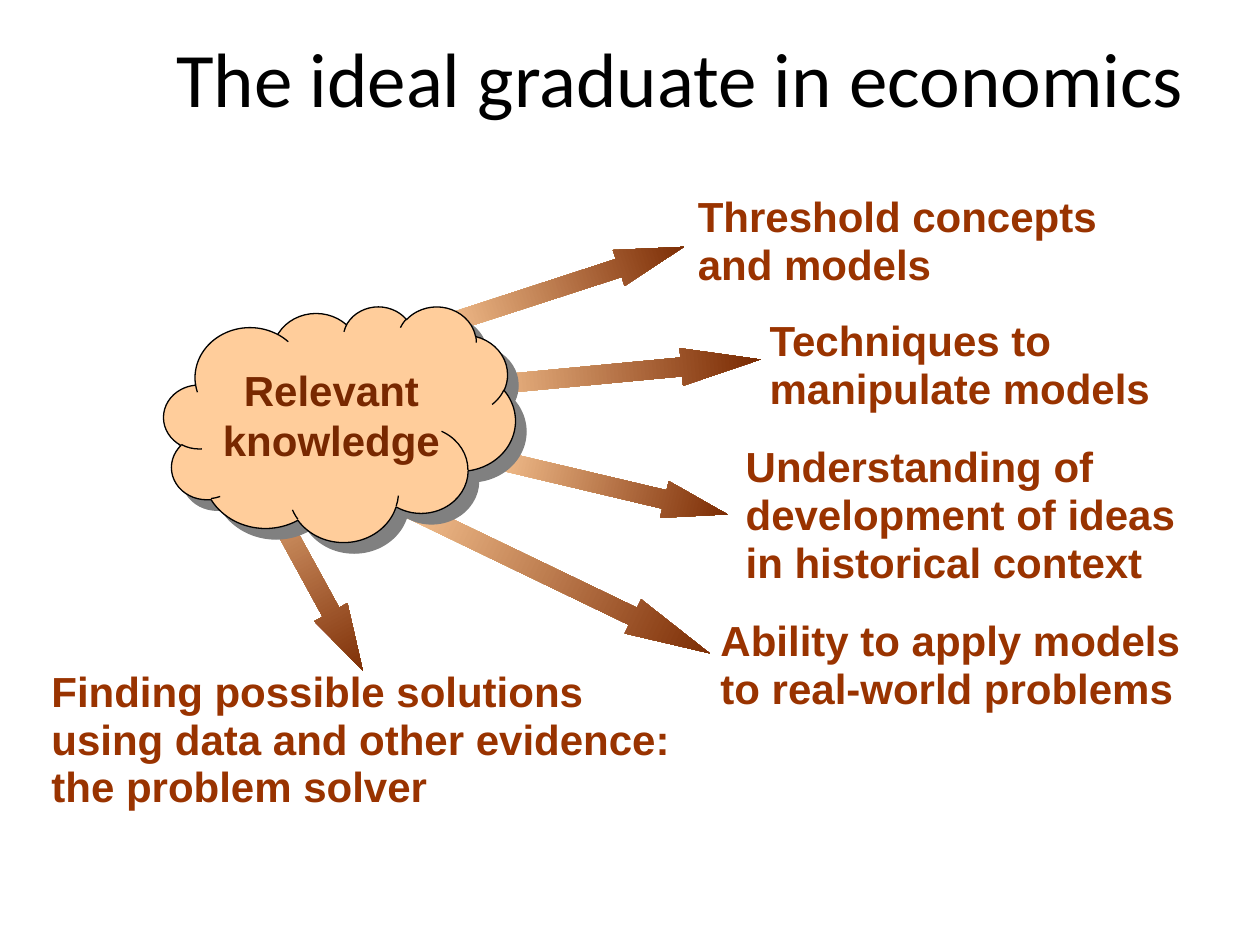
from lxml.etree import SubElement
from pptx import Presentation
from pptx.dml.color import RGBColor as RGB
from pptx.enum.shapes import MSO_SHAPE as Kind
from pptx.enum.text import MSO_ANCHOR as Anchor, MSO_AUTO_SIZE as Auto, PP_ALIGN as Align
from pptx.oxml.ns import qn
from pptx.util import Inches, Pt

COLS, ROWS = 100, 75


def paint(fmt, *hues):
    """Fill with one hue, or with a left-to-right gradient of two."""
    if len(hues) == 1:
        fmt.solid()
        fmt.fore_color.rgb = RGB.from_string(hues[0])
        return
    fmt.gradient()
    fmt.gradient_angle = 0
    for stop, hue, spot in zip(fmt.gradient_stops, hues, (0, 1)):
        stop.color.rgb = RGB.from_string(hue)
        stop.position = spot


def write(frame, text, size=24, font="Arial", hue="993300", bold=True,
          align=Align.LEFT, lead=None, anchor=Anchor.TOP, fit=Auto.SHAPE_TO_FIT_TEXT):
    frame.word_wrap = True
    frame.auto_size = fit
    frame.vertical_anchor = anchor
    para = frame.paragraphs[0]
    para.text = text
    para.alignment = align
    para.line_spacing = lead
    for run in para.runs:
        run.font.size = Pt(size)
        run.font.name = font
        run.font.bold = bold
        paint(run.font.fill, hue)


class Deck:
    """One slide on a grid of 100 columns by 75 rows."""
    peach, rust, grey, black = "FFCD9B", "782800", "808080", "000000"

    def __init__(self):
        self.prs = Presentation()
        self.prs.slide_width, self.prs.slide_height = Inches(10), Inches(7.5)
        self.slide = self.prs.slides.add_slide(self.prs.slide_layouts[5])
        self.shapes = self.slide.shapes

    def grid(self, col, row, wide, high):
        across = self.prs.slide_width / COLS
        down = self.prs.slide_height / ROWS
        return [round(n) for n in (col * across, row * down, wide * across, high * down)]

    def title(self, text, *box):
        head = self.shapes.title
        head.left, head.top, head.width, head.height = self.grid(*box)
        write(head.text_frame, text, size=44, font="Calibri", hue=self.black, bold=False,
              align=Align.CENTER, anchor=Anchor.MIDDLE, fit=Auto.NONE)

    def label(self, text, *box, **style):
        write(self.shapes.add_textbox(*self.grid(*box)).text_frame, text, **style)

    def shape(self, kind, *box):
        item = self.shapes.add_shape(kind, *self.grid(*box))
        item.shadow.inherit = False
        return item

    def arrow(self, col, row, wide, turn, head):
        item = self.shape(Kind.RIGHT_ARROW, col, row, wide, 3)
        item.rotation = turn
        item.adjustments[0], item.adjustments[1] = 0.5, head
        paint(item.fill, self.peach, self.rust)
        item.line.fill.background()

    def cloud(self, *box):
        item = self.shape(Kind.CLOUD, *box)
        paint(item.fill, self.peach)
        paint(item.line.fill, self.black)
        item.line.width = Pt(0.75)
        effects = item.element.spPr.find(qn("a:effectLst"))
        shade = SubElement(effects, qn("a:outerShdw"), blurRad="0", dist=str(Pt(8.5)),
                           dir="2700000", algn="ctr", rotWithShape="0")
        SubElement(shade, qn("a:srgbClr"), val=self.grey)


# Each skill: text, text box, then its arrow: column, row, length, turn, head
SKILLS = [
    ("Finding possible solutions\vusing data and other evidence:\vthe problem solver",
     (3.1, 52.6, 69.2, 12.4), (13.4, 42.6, 20.8, 61.3, 1.76)),
    ("Ability to apply models to real-world problems",
     (56.2, 48.6, 40.6, 8.6), (29.8, 44.3, 27.9, 25.7, 2.25)),
    ("Understanding of development of ideas in historical context",
     (58.2, 34.8, 38.6, 12.4), (37.8, 37, 20.2, 13.3, 1.71)),
    ("Techniques to manipulate models",
     (60.1, 24.8, 38.6, 8.6), (35.6, 28.2, 24.8, 354.6, 2.1)),
    ("Threshold concepts and models",
     (54.4, 14.9, 38.6, 8.6), (33.4, 21.4, 21.4, 342, 1.81)),
]


def main():
    deck = Deck()
    deck.title("The ideal graduate in economics", 12.2, 1.5, 83.6, 9.2)
    for text, box, arrow in SKILLS:
        deck.arrow(*arrow)
        deck.label(text, *box, lead=0.95)
    deck.cloud(13, 24.3, 27.9, 18.7)
    deck.label("Relevant knowledge", 15.2, 28.4, 22.2, 9, hue=deck.rust, align=Align.CENTER)
    deck.prs.save("out.pptx")


if __name__ == "__main__":
    main()
